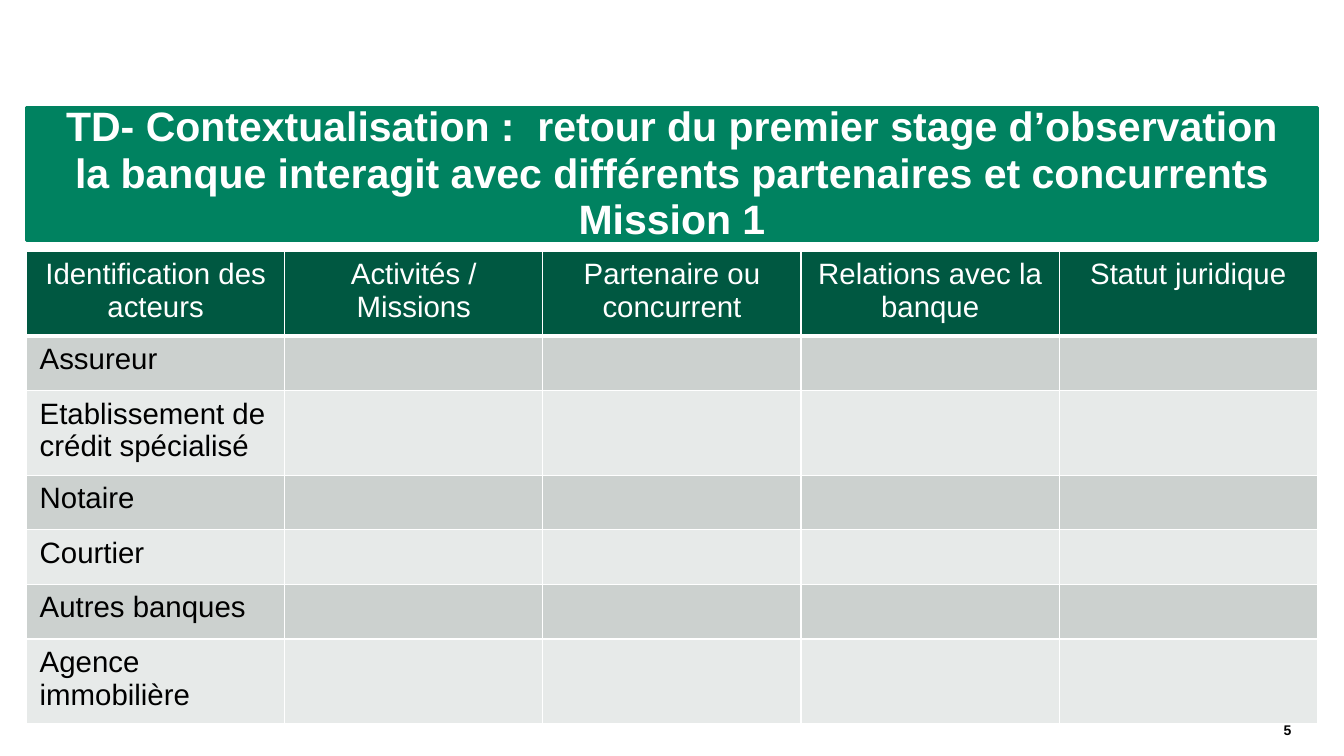
from lxml import etree
from pptx import Presentation
from pptx.dml.color import RGBColor
from pptx.enum.text import MSO_ANCHOR, MSO_AUTO_SIZE, PP_ALIGN
from pptx.oxml.ns import qn
from pptx.util import Pt

CENTER, LEFT, RIGHT = PP_ALIGN.CENTER, PP_ALIGN.LEFT, PP_ALIGN.RIGHT
MIDDLE, TOP, NO_AUTOFIT = MSO_ANCHOR.MIDDLE, MSO_ANCHOR.TOP, MSO_AUTO_SIZE.NONE
WHITE = RGBColor(0xFF, 0xFF, 0xFF)
BLACK = RGBColor(0x00, 0x00, 0x00)
GREEN = RGBColor(0x00, 0x82, 0x60)
DARK_GREEN = RGBColor(0x00, 0x58, 0x41)
BANDS = [RGBColor(0xCC, 0xD1, 0xCF), RGBColor(0xE7, 0xEA, 0xE9)]

TITLE = {"name": "Arial", "size": Pt(29.3), "bold": True}
BODY = {"name": "Arial", "size": Pt(21), "bold": False}

TITLE_LINES = [
    "TD- Contextualisation :  retour du premier stage d’observation",
    "la banque interagit avec différents partenaires et concurrents",
    "Mission 1",
]
HEADERS = ["Identification des acteurs", "Activités / Missions",
           "Partenaire ou concurrent", "Relations avec la banque",
           "Statut juridique"]
ACTORS = ["Assureur", "Etablissement de crédit spécialisé", "Notaire",
          "Courtier", "Autres banques", "Agence immobilière"]
ROW_HEIGHTS = [60.5, 39, 60.5, 39, 39, 39, 60.5]


def style(p, fmt, color, align):
    """Format a paragraph and its runs."""
    p.alignment = align
    for r in p.runs:
        for key, value in fmt.items():
            setattr(r.font, key, value)
        r.font.color.rgb = color


def set_frame(tf, anchor):
    """Give a text frame zero insets, wrapping and an anchor."""
    fmt = {"margin_left": 0, "margin_right": 0, "margin_top": 0,
           "margin_bottom": 0, "word_wrap": True, "vertical_anchor": anchor,
           "auto_size": NO_AUTOFIT}
    for key, value in fmt.items():
        setattr(tf, key, value)


def add_solid_fill(parent, color):
    """Append a solid fill to an XML element."""
    fill = etree.SubElement(parent, qn("a:solidFill"))
    etree.SubElement(fill, qn("a:srgbClr"), val=str(color))


def set_borders(cell, bottom):
    """Draw white cell borders with the given bottom width."""
    tcPr = cell._tc.get_or_add_tcPr()
    for i, side in enumerate(["lnL", "lnR", "lnT", "lnB"]):
        width = bottom if side == "lnB" else 1
        ln = etree.Element(qn("a:" + side), w=str(int(Pt(width))))
        add_solid_fill(ln, WHITE)
        tcPr.insert(i, ln)


def add_title(slide, x, y, w, h):
    """Place the green title banner."""
    sp = slide.shapes.title
    sp.left, sp.top, sp.width, sp.height = Pt(x), Pt(y), Pt(w), Pt(h)
    sp.fill.solid()
    sp.fill.fore_color.rgb = GREEN
    sp.line.color.rgb = GREEN
    sp.line.width = Pt(2)
    set_frame(sp.text_frame, MIDDLE)
    p = sp.text_frame.paragraphs[0]
    p.text = "\v".join(TITLE_LINES)
    p.line_spacing = 0.94
    style(p, TITLE, WHITE, CENTER)


def add_actor_table(slide, x, y, w):
    """Place the table of actors, empty but for its first column."""
    rows = [HEADERS] + [[a] + [""] * (len(HEADERS) - 1) for a in ACTORS]
    table = slide.shapes.add_table(len(rows), len(HEADERS), Pt(x), Pt(y),
                                   Pt(w), Pt(sum(ROW_HEIGHTS))).table
    for col in table.columns:
        col.width = Pt(w / len(HEADERS))
    for i, (row, height) in enumerate(zip(rows, ROW_HEIGHTS)):
        table.rows[i].height = Pt(height)
        header = i == 0
        for j, text in enumerate(row):
            cell = table.cell(i, j)
            cell.margin_left = cell.margin_right = Pt(9.4)
            cell.margin_top = cell.margin_bottom = Pt(5)
            cell.vertical_anchor = TOP
            cell.fill.solid()
            cell.fill.fore_color.rgb = DARK_GREEN if header else BANDS[(i - 1) % 2]
            set_borders(cell, 3 if header else 1)
            if text:
                p = cell.text_frame.paragraphs[0]
                p.text = text
                style(p, BODY, WHITE if header else BLACK,
                      CENTER if header else LEFT)


def add_slide_number(slide, x, y, w, h):
    """Place the slide number as a field."""
    tf = slide.shapes.add_textbox(Pt(x), Pt(y), Pt(w), Pt(h)).text_frame
    set_frame(tf, MIDDLE)
    p = tf.paragraphs[0]
    p.alignment = RIGHT
    fld = etree.SubElement(p._p, qn("a:fld"), type="slidenum",
                           id="{B6F15528-21DE-4FAA-801E-634DDDAF4B2B}")
    rPr = etree.SubElement(fld, qn("a:rPr"), lang="fr-FR", sz="1000", b="1")
    add_solid_fill(rPr, BLACK)
    etree.SubElement(rPr, qn("a:latin"), typeface="Arial")
    etree.SubElement(fld, qn("a:t")).text = "5"


def main():
    """Build the slide and save it."""
    prs = Presentation()
    prs.slide_width, prs.slide_height = Pt(960), Pt(540)
    prs.element.set("firstSlideNum", "5")
    slide = prs.slides.add_slide(prs.slide_layouts[5])
    add_title(slide, 19, 77, 922, 95)
    add_actor_table(slide, 19, 179.5, 922)
    add_slide_number(slide, 780.5, 502.5, 142, 37.5)
    prs.save("out.pptx")


if __name__ == "__main__":
    main()
